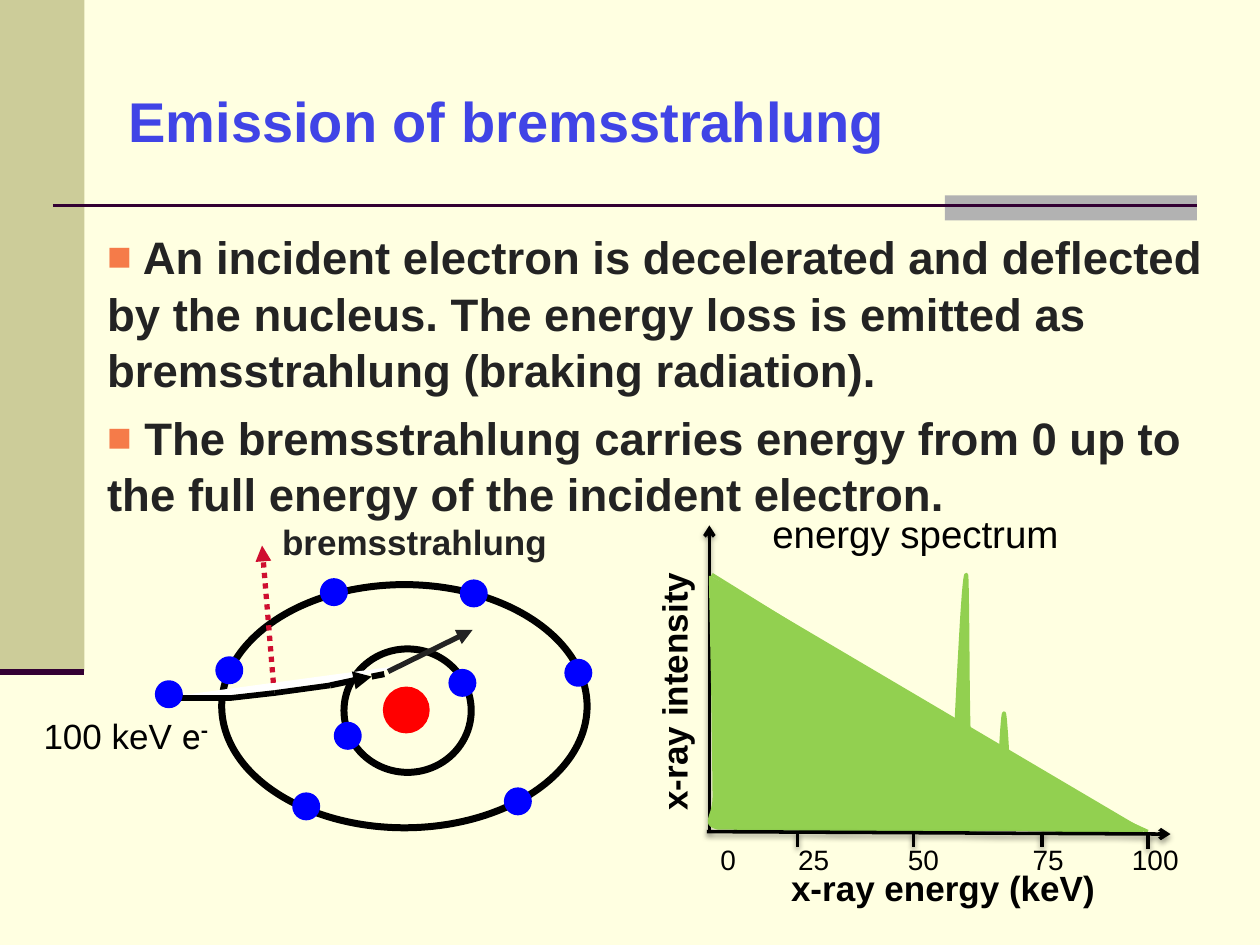
from dataclasses import dataclass

from pptx import Presentation
from pptx.dml.color import RGBColor
from pptx.enum.dml import MSO_LINE
from pptx.enum.shapes import MSO_CONNECTOR, MSO_SHAPE
from pptx.enum.text import MSO_ANCHOR, MSO_AUTO_SIZE, PP_ALIGN
from pptx.oxml import parse_xml
from pptx.oxml.ns import nsdecls
from pptx.util import Inches, Pt

BLACK, DARK, PLUM = "000000", "232323", "330033"
BLUE, RED, GREEN = "0000FF", "FF0000", "92D050"
ELECTRON = 0.18

Point = tuple[float, float]


@dataclass
class Run:
    text: str
    size: float = 20
    color: str = BLACK
    bold: bool = False
    font: str = "Arial"
    superscript: bool = False


@dataclass
class Line:
    start: Point
    end: Point
    width: float
    color: str = BLACK
    arrow: str = ""
    dotted: bool = False
    shadow: bool = False


@dataclass
class Label:
    left: float
    top: float
    width: float
    height: float
    runs: list[Run]
    rotation: float = 0
    inset: float | None = None


def rgb(color: str) -> RGBColor:
    return RGBColor.from_string(color)


def xml(markup: str):
    """Parse one DrawingML element, given without its namespace."""
    tag, rest = markup[:-2].split(" ", 1) if " " in markup[:-2] else (markup[:-2], "")
    return parse_xml(f"{tag} {nsdecls('a')} {rest}/>")


def paint(sp, fill: str = "", line: str = "", width: float = 0) -> None:
    sp.shadow.inherit = False
    if fill:
        sp.fill.solid()
        sp.fill.fore_color.rgb = rgb(fill)
    else:
        sp.fill.background()
    if line:
        sp.line.color.rgb = rgb(line)
        sp.line.width = Pt(width)
    else:
        sp.line.fill.background()


def add_preset(shapes, kind, box: tuple, fill: str = "", line: str = "", width: float = 0) -> None:
    paint(shapes.add_shape(kind, *map(Inches, box)), fill, line, width)


def add_line(shapes, line: Line) -> None:
    c = shapes.add_connector(MSO_CONNECTOR.STRAIGHT, *map(Inches, line.start + line.end))
    c.line.color.rgb = rgb(line.color)
    c.line.width = Pt(line.width)
    if line.dotted:
        c.line.dash_style = MSO_LINE.ROUND_DOT
    if line.arrow:
        c.line._get_or_add_ln().append(xml(f'<a:tailEnd type="{line.arrow}"/>'))
    effects = xml("<a:effectLst/>")
    if line.shadow:
        shadow = xml(f'<a:outerShdw blurRad="{Pt(3.1)}" dist="{Pt(1.6)}" dir="5400000" rotWithShape="0"/>')
        color = xml(f'<a:srgbClr val="{BLACK}"/>')
        color.append(xml('<a:alpha val="38000"/>'))
        shadow.append(color)
        effects.append(shadow)
    c._element.spPr.append(effects)


def add_runs(p, runs: list[Run]) -> None:
    for run in runs:
        r = p.add_run()
        r.text = run.text
        r.font.name, r.font.size, r.font.bold = run.font, Pt(run.size), run.bold
        r.font.color.rgb = rgb(run.color)
        if run.superscript:
            r.font._element.set("baseline", "30000")


def add_label(shapes, label: Label):
    sp = shapes.add_textbox(*map(Inches, (label.left, label.top, label.width, label.height)))
    sp.rotation = label.rotation
    tf = sp.text_frame
    tf.word_wrap = False
    if label.inset is not None:
        tf.margin_left = tf.margin_right = tf.margin_top = tf.margin_bottom = Inches(label.inset)
    p = tf.paragraphs[0]
    p.alignment = PP_ALIGN.CENTER
    add_runs(p, label.runs)
    return sp


def add_outline(shapes, points: list[Point], fill: str, line: str = "", close: bool = False) -> None:
    start, *rest = [(Inches(x), Inches(y)) for x, y in points]
    builder = shapes.build_freeform(*start)
    builder.add_line_segments(rest, close=close)
    paint(builder.convert_to_shape(), fill, line, 2)


def curve(a: Point, b: Point, c: Point, d: Point, steps: int = 12) -> list[Point]:
    """Points along a cubic Bezier curve."""
    ts = [i / steps for i in range(steps + 1)]
    return [tuple((1 - t) ** 3 * p + 3 * t * (1 - t) ** 2 * q + 3 * t * t * (1 - t) * r + t ** 3 * s
                  for p, q, r, s in zip(a, b, c, d)) for t in ts]


def place(sp, left: float, top: float, width: float, height: float) -> None:
    sp.left, sp.top, sp.width, sp.height = map(Inches, (left, top, width, height))
    sp.text_frame.auto_size = MSO_AUTO_SIZE.NONE


def add_frame(shapes) -> None:
    add_preset(shapes, MSO_SHAPE.RECTANGLE, (0, 0, 0.67, 5.33), "CCCC99")
    add_preset(shapes, MSO_SHAPE.RECTANGLE, (7.5, 1.55, 2, 0.2), "B2B2B2")
    add_line(shapes, Line((0.42, 1.63), (9.5, 1.63), 1.5, PLUM))
    add_line(shapes, Line((0, 5.33), (0.67, 5.33), 3.5, PLUM))


def fill_placeholders(slide) -> None:
    title, body = slide.placeholders
    place(title, 0.92, 0.33, 8.58, 1.25)
    title.text_frame.vertical_anchor = MSO_ANCHOR.MIDDLE
    p = title.text_frame.paragraphs[0]
    p.alignment = PP_ALIGN.LEFT
    add_runs(p, [Run("Emission of bremsstrahlung", 32, "4044E6", True)])

    place(body, 0.75, 1.75, 9, 2.33)
    tf = body.text_frame
    points = [
        " An incident electron is decelerated and deflected by the nucleus. "
        "The energy loss is emitted as bremsstrahlung (braking radiation).",
        " The bremsstrahlung carries energy from 0 up to the full energy of the incident electron.",
    ]
    for i, text in enumerate(points):
        p = tf.add_paragraph() if i else tf.paragraphs[0]
        p.line_spacing = 1.04
        p.space_before = Pt(6 if i else 0)
        pPr = p._p.get_or_add_pPr()
        pPr.set("marL", "0")
        pPr.set("indent", "0")
        color = xml("<a:buClr/>")
        color.append(xml('<a:srgbClr val="F57B49"/>'))
        pPr.extend([color, xml('<a:buSzPct val="90000"/>'),
                    xml('<a:buFont typeface="Arial"/>'), xml('<a:buChar char="■"/>')])
        add_runs(p, [Run(text, 26, DARK, True)])


def add_atom(shapes) -> None:
    for shell in ((1.76, 4.64, 2.9, 1.93), (2.73, 5.15, 1.01, 0.98)):
        add_preset(shapes, MSO_SHAPE.OVAL, shell, line=BLACK, width=4)
    add_preset(shapes, MSO_SHAPE.OVAL, (3.06, 5.47, 0.33, 0.33), RED, RED, 3)
    beam = [(1.42, 5.52), (1.81, 5.52), (2.16, 5.48), (2.6, 5.42), (2.93, 5.35), (3.27, 5.27)]
    add_outline(shapes, beam, "FFFFFF", close=True)
    for line in (
        Line((1.44, 5.54), (1.83, 5.54), 3),
        Line((1.83, 5.54), (2.18, 5.5), 3.25),
        Line((2.18, 5.5), (2.62, 5.44), 3.25),
        Line((2.62, 5.44), (2.95, 5.37), 3.5, arrow="triangle"),
        Line((2.95, 5.37), (3.05, 5.35), 3.5),
        Line((2.17, 5.42), (2.08, 4.33), 3, "CF0E30", "triangle", dotted=True),
        Line((3.08, 5.33), (3.75, 5), 3, DARK, "triangle"),
    ):
        add_line(shapes, line)
    for left, top in ((3.58, 5.33), (2.34, 6.31), (2.56, 4.61), (1.73, 5.23), (3.67, 4.62),
                      (4.02, 6.27), (4.5, 5.25), (1.25, 5.42), (2.67, 5.75)):
        add_preset(shapes, MSO_SHAPE.OVAL, (left, top, ELECTRON, ELECTRON), BLUE, BLUE, 3)
    add_label(shapes, Label(0.33, 5.67, 1.34, 0.34, [
        Run("100 keV "), Run("e", font="Roboto"),
        Run("-", bold=True, font="Roboto", superscript=True)], inset=0))
    add_label(shapes, Label(2.13, 4.08, 2.32, 0.44, [Run("bremsstrahlung", color=DARK, bold=True)]))


def add_spectrum(shapes) -> None:
    add_line(shapes, Line((5.63, 6.6), (5.63, 4.17), 2, arrow="arrow", shadow=True))
    tall_peak = (curve((7.59, 5.72), (7.62, 5.13), (7.65, 4.54), (7.67, 4.56))
                 + curve((7.67, 4.56), (7.68, 4.57), (7.68, 5.59), (7.69, 5.8)) + [(7.7, 5.8)])
    short_peak = (curve((7.94, 5.99), (7.95, 5.82), (7.96, 5.65), (7.97, 5.66))
                  + curve((7.97, 5.66), (7.98, 5.67), (8, 6.04), (8, 6.04)))
    slope = [(5.65, 4.56), (6.73, 5.23), (7.23, 5.53), (7.65, 5.77), (8.08, 6.05),
             (8.44, 6.26), (8.78, 6.45), (9.11, 6.6)]
    base = ([(5.64, 4.57), (5.66, 5.55), (5.67, 6.32)]
            + curve((5.67, 6.32), (5.67, 6.49), (5.57, 6.53), (5.69, 6.57))
            + [(6.36, 6.58), (7.24, 6.6), (7.95, 6.58), (9.07, 6.6)])
    for outline in (tall_peak, short_peak, slope, base):
        add_outline(shapes, outline, GREEN, GREEN)

    add_line(shapes, Line((5.61, 6.6), (9.29, 6.62), 2, arrow="arrow", shadow=True))
    for x, y in ((6.33, 6.6), (7.25, 6.6), (8.27, 6.6), (9.11, 6.62)):
        add_line(shapes, Line((x, y), (x, y + 0.12), 2, shadow=True))

    ticks = {"0": 5.78, "25": 6.46, "50": 7.33, "75": 8.32, "100": 9.17}
    text_left = 5.6
    scale = add_label(shapes, Label(5.5, 6.64, 4.08, 0.38, [Run("\t" + "\t".join(ticks), 16)]))
    scale.text_frame.word_wrap = True
    p = scale.text_frame.paragraphs[0]
    p.alignment = PP_ALIGN.LEFT
    tabs = xml("<a:tabLst/>")
    for x in ticks.values():
        tabs.append(xml(f'<a:tab pos="{Inches(x - text_left)}" algn="ctr"/>'))
    p._p.get_or_add_pPr().append(tabs)

    for label in (
        Label(6.17, 6.83, 2.63, 0.44, [Run("x-ray energy (keV)", bold=True)]),
        Label(4.26, 5.23, 2.18, 0.44, [Run("x-ray intensity ", bold=True)], rotation=270),
        Label(5.92, 4, 2.69, 0.47, [Run("energy spectrum", 22)]),
    ):
        add_label(shapes, label)


def main() -> None:
    prs = Presentation()
    prs.slide_width, prs.slide_height = Inches(10), Inches(7.5)
    slide = prs.slides.add_slide(prs.slide_layouts[1])
    slide.background.fill.solid()
    slide.background.fill.fore_color.rgb = rgb("FFFFE1")
    add_frame(slide.shapes)
    fill_placeholders(slide)
    add_atom(slide.shapes)
    add_spectrum(slide.shapes)
    prs.save("out.pptx")


if __name__ == "__main__":
    main()
